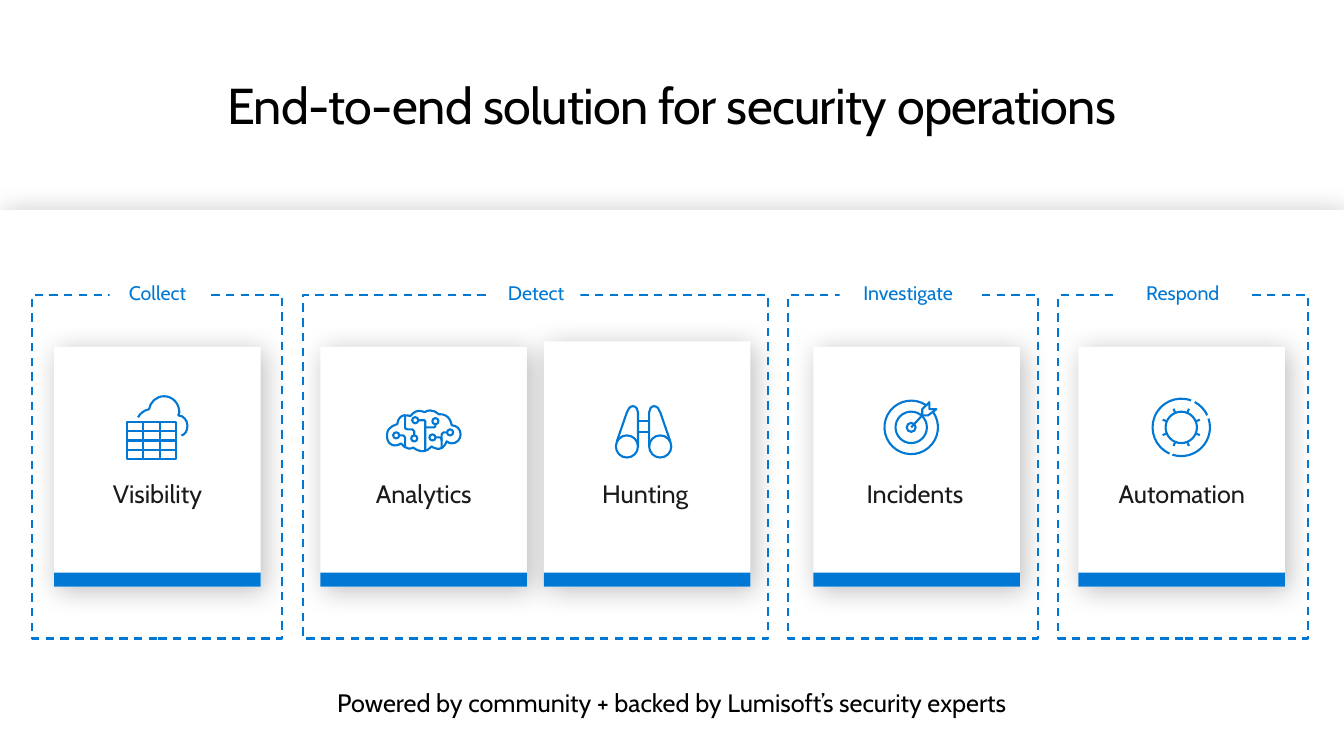
from math import ceil, cos, radians, sin, tan

from lxml import etree
from pptx import Presentation
from pptx.dml.color import RGBColor
from pptx.enum.dml import MSO_LINE
from pptx.enum.shapes import MSO_CONNECTOR, MSO_SHAPE
from pptx.enum.text import MSO_ANCHOR, PP_ALIGN
from pptx.oxml import parse_xml
from pptx.oxml.ns import nsdecls, qn
from pptx.util import Pt

BLUE = RGBColor(0x00, 0x78, 0xD4)
FRAME_BLUE = RGBColor(0x00, 0x78, 0xD3)
WHITE = RGBColor(0xFF, 0xFF, 0xFF)
BLACK = RGBColor(0x00, 0x00, 0x00)
INK = RGBColor(0x1A, 0x1A, 0x1A)

TITLE = "End-to-end solution for security operations"
FOOTER = "Powered by community + backed by Lumisoft’s security experts"

# (name, frame left, frame width, tag left, tag width)
STAGES = [
    ("Collect", 23, 178.6, 78.3, 68.4),
    ("Detect", 216.3, 332.6, 351.2, 63.4),
    ("Investigate", 563, 178.6, 599.8, 97.9),
    ("Respond", 756, 178.6, 799.2, 91.4),
]
# (name, card left, card top, label left, label width, icon centre)
CARDS = [
    ("Visibility", 38.6, 247.7, 34.4, 156.2, (112.3, 305.3)),
    ("Analytics", 228.8, 247.7, 224.6, 156.2, (302.4, 308.5)),
    ("Hunting", 388.5, 243.8, 383.5, 154.8, (459.7, 308.5)),
    ("Incidents", 581, 247.7, 577.2, 152.6, (650.9, 305.3)),
    ("Automation", 770.3, 247.7, 766.1, 156.2, (843.8, 305.3)),
]
CARD_WIDTH, CARD_BOTTOM = 147.6, 419
BAR_HEIGHT = 10

# Table under the cloud
TABLE_LEFT, TABLE_TOP, TABLE_WIDTH, TABLE_HEIGHT = 90.7, 301.7, 35.3, 25.9
TABLE_COLUMNS, TABLE_ROWS = 3, 4

# Chains of cubic curves, in points from the icon centre
CLOUD = [
    (-13.7, -7.2),
    (-12.2, -10.1), (-9.4, -12.2), (-5.8, -13),
    (-5, -18), (-0.7, -22.3), (5, -22.3),
    (10.8, -22.3), (15.8, -17.3), (15.8, -10.8),
    (15.8, -10.1), (15.8, -9.4), (15.1, -8.6),
    (18.7, -8.6), (21.6, -5), (21.6, -1.4),
    (21.6, 2.2), (20.2, 5), (17.3, 5.8),
]
BRAIN = [
    (16.6, 6.8),
    (18, 7.6), (18.7, 8.3), (20.2, 8.3),
    (23.8, 8.3), (26.6, 5.4), (26.6, 1.8),
    (26.6, -1.8), (23.8, -4.7), (20.2, -4.7),
    (20.2, -4.7), (19.4, -13.3), (10.8, -12.6),
    (10.8, -12.6), (6.5, -17.6), (0.7, -14),
    (0.7, -14), (-4.3, -17.6), (-9.4, -11.2),
    (-9.4, -11.2), (-17.3, -14.8), (-18.7, -5.4),
    (-18.7, -5.4), (-25.9, -4), (-25.9, 1.8),
    (-26.6, 8.3), (-21.6, 11.9), (-15.8, 8.3),
    (-15.8, 8.3), (-12.2, 14), (-7.2, 11.2),
    (-7.2, 11.2), (0, 17.6), (5.8, 10.4),
    (5.8, 10.4), (13, 16.2), (16.6, 6.8),
]
BARREL = [
    (19.1, 6.8),
    (19.1, 6.8), (11.9, -14), (11.9, -14),
    (11.2, -16.2), (9.7, -18.4), (7.6, -18.4),
    (5.4, -18.4), (4, -16.2), (4, -14),
    (4, -14), (4, 10.4), (4, 10.4),
]
# Corner points of straight strokes
BRAIN_NODES = [(19.1, 0.4), (6.5, 4), (-5.8, -8.3), (8.6, -7.6), (-6.5, 4.7), (-19.4, 2.5)]
BRAIN_WIRES = [
    [(-13, 11.2), (-13, 4), (-14.4, 2.5), (-17.3, 2.5)],
    [(1.4, 13.3), (1.4, -7.6), (0.7, -8.3), (-3.6, -8.3)],
    [(1.4, -3.2), (7.9, -3.2), (8.6, -4), (8.6, -5.4)],
    [(-13, -11.9), (-13, -2.5), (-11.5, -1.8), (-7.9, -1.8), (-6.5, -0.4), (-6.5, 2.5)],
    [(16.6, 0.4), (14.4, 0.4), (13, 1.8), (13, 6.8)],
    [(13, 11.9), (13, 5.4), (12.2, 4), (8.6, 4)],
]
DART = [(7.9, -8.6), (7.9, -13), (13, -18), (13, -13), (18, -13), (12.2, -8.6), (7.9, -8.6)]


def arc(radius, start=0, end=360, centre=(0, 0)):
    """Chain of cubic curves, each at most a quarter turn."""
    count = ceil(abs(end - start) / 90)
    step = radians(end - start) / count
    reach = 4 / 3 * tan(step / 4)
    chain = [(cos(radians(start)), sin(radians(start)))]
    for number in range(count):
        a = radians(start) + number * step
        b = a + step
        chain += [(cos(a) - reach * sin(a), sin(a) + reach * cos(a)),
                  (cos(b) + reach * sin(b), sin(b) - reach * cos(b)), (cos(b), sin(b))]
    return [(centre[0] + radius * x, centre[1] + radius * y) for x, y in chain]


def straight(corners):
    """Chain of cubic curves that runs straight between the corners."""
    chain = [corners[0]]
    for start, end in zip(corners, corners[1:]):
        chain += [start, end, end]
    return chain


def mirrored(points):
    return [(-x, y) for x, y in points]


def tooth(angle):
    direction = cos(radians(angle)), sin(radians(angle))
    return straight([tuple(radius * part for part in direction) for radius in (11.5, 14.4)])


LENS = arc(7.9, centre=(11.9, 10.4))
ICONS = {
    "Visibility": [CLOUD],
    "Analytics": [BRAIN, *map(straight, BRAIN_WIRES), *(arc(2.2, centre=node) for node in BRAIN_NODES)],
    "Hunting": [LENS, mirrored(LENS), BARREL, mirrored(BARREL),
                *(straight([(-4, y), (4, y)]) for y in (-7.6, 0.4))],
    "Incidents": [arc(19.1, -36, 304), arc(11.2), arc(3.2), straight([(0, 0), DART[0]]), straight(DART)],
    "Automation": [arc(11.2), arc(20.5, -70, -246), arc(20.5, 108, -18), arc(20.5, -25, -62),
                   *(tooth(22.5 + 45 * number) for number in range(8))],
}


def style(shape, fill=None, line=None, dash=None):
    shape.shadow.inherit = False
    if fill is None:
        shape.fill.background()
    else:
        shape.fill.solid()
        shape.fill.fore_color.rgb = fill
    if line is None:
        shape.line.fill.background()
    else:
        shape.line.color.rgb = line
        shape.line.width = Pt(1.5)
        shape.line.dash_style = dash
    return shape


def add_box(slide, left, top, width, height, shadow=False, **look):
    shape = slide.shapes.add_shape(MSO_SHAPE.RECTANGLE, Pt(left), Pt(top), Pt(width), Pt(height))
    style(shape, **look)
    if shadow:
        shape._element.spPr.find(qn("a:effectLst")).append(parse_xml(
            f'<a:outerShdw {nsdecls("a")} blurRad="{Pt(20)}" dist="{Pt(4)}" dir="2700000" '
            'algn="tl" rotWithShape="0"><a:srgbClr val="000000"><a:alpha val="25000"/>'
            '</a:srgbClr></a:outerShdw>'))
    return shape


def write(shape, text, size, color, inset=7.2, bottom=None, anchor=MSO_ANCHOR.TOP):
    settings = {"word_wrap": True, "vertical_anchor": anchor}
    settings.update({f"margin_{side}": Pt(inset) for side in ("left", "right", "top", "bottom")})
    if bottom is not None:
        settings["margin_bottom"] = Pt(bottom)
    for name, value in settings.items():
        setattr(shape.text_frame, name, value)
    paragraph = shape.text_frame.paragraphs[0]
    paragraph.alignment = PP_ALIGN.CENTER
    run = paragraph.add_run()
    run.text = text
    for name, value in {"name": "Cabin", "size": Pt(size)}.items():
        setattr(run.font, name, value)
    run.font.color.rgb = color
    return run


def add_label(slide, left, top, width, height, *text_format, **options):
    box = slide.shapes.add_textbox(Pt(left), Pt(top), Pt(width), Pt(height))
    return write(box, *text_format, **options)


def add_icon(slide, centre, chains):
    """Draw chains of cubic curves as one freeform."""
    placed = [[(Pt(centre[0] + x), Pt(centre[1] + y)) for x, y in chain] for chain in chains]
    builder = slide.shapes.build_freeform(*placed[0][0])
    for number, chain in enumerate(placed):
        if number:
            builder.move_to(*chain[0])
        builder.add_line_segments(chain[1:], close=False)
    icon = style(builder.convert_to_shape(), line=BLUE)
    segments = list(icon._element.iter(qn("a:lnTo")))
    for triple in zip(segments[::3], segments[1::3], segments[2::3]):
        bend = etree.Element(qn("a:cubicBezTo"))
        triple[0].addprevious(bend)
        for segment in triple:
            bend.append(segment[0])
            segment.getparent().remove(segment)


def add_rule(slide, *ends):
    rule = slide.shapes.add_connector(MSO_CONNECTOR.STRAIGHT, *map(Pt, ends))
    rule.line.color.rgb = BLUE
    rule.line.width = Pt(1.5)
    etree.SubElement(rule._element.spPr, qn("a:effectLst"))


def add_table_icon(slide):
    add_box(slide, TABLE_LEFT, TABLE_TOP, TABLE_WIDTH, TABLE_HEIGHT, line=BLUE)
    right, bottom = TABLE_LEFT + TABLE_WIDTH, TABLE_TOP + TABLE_HEIGHT
    for column in range(1, TABLE_COLUMNS):
        x = TABLE_LEFT + column * TABLE_WIDTH / TABLE_COLUMNS
        add_rule(slide, x, TABLE_TOP, x, bottom)
    for row in range(1, TABLE_ROWS):
        y = TABLE_TOP + row * TABLE_HEIGHT / TABLE_ROWS
        add_rule(slide, TABLE_LEFT, y, right, y)


presentation = Presentation()
presentation.slide_width, presentation.slide_height = Pt(960), Pt(540)
slide = presentation.slides.add_slide(presentation.slide_layouts[6])

add_box(slide, 0, 150, 960, 390, fill=WHITE, shadow=True)
title = add_label(slide, 46, 52.6, 867.6, 44, TITLE, 36, BLACK, inset=0, anchor=MSO_ANCHOR.MIDDLE)
title._r.get_or_add_rPr().set("spc", "-50")

for name, left, top, label_left, label_width, centre in CARDS:
    add_box(slide, left, top, CARD_WIDTH, CARD_BOTTOM - top, fill=WHITE, shadow=True)
    add_box(slide, left, CARD_BOTTOM - BAR_HEIGHT, CARD_WIDTH, BAR_HEIGHT, fill=BLUE)
    add_label(slide, label_left, 334.8, label_width, 36, name, 18, INK)
    add_icon(slide, centre, ICONS[name])
add_table_icon(slide)

for name, left, width, tag_left, tag_width in STAGES:
    add_box(slide, left, 210.6, width, 245.5, line=FRAME_BLUE, dash=MSO_LINE.DASH)
    write(add_box(slide, tag_left, 193.7, tag_width, 31, fill=WHITE), name, 14, BLUE)

add_label(slide, 77, 495.4, 805.7, 34.6, FOOTER, 18, BLACK, inset=0, bottom=22, anchor=MSO_ANCHOR.MIDDLE)

presentation.save("out.pptx")
